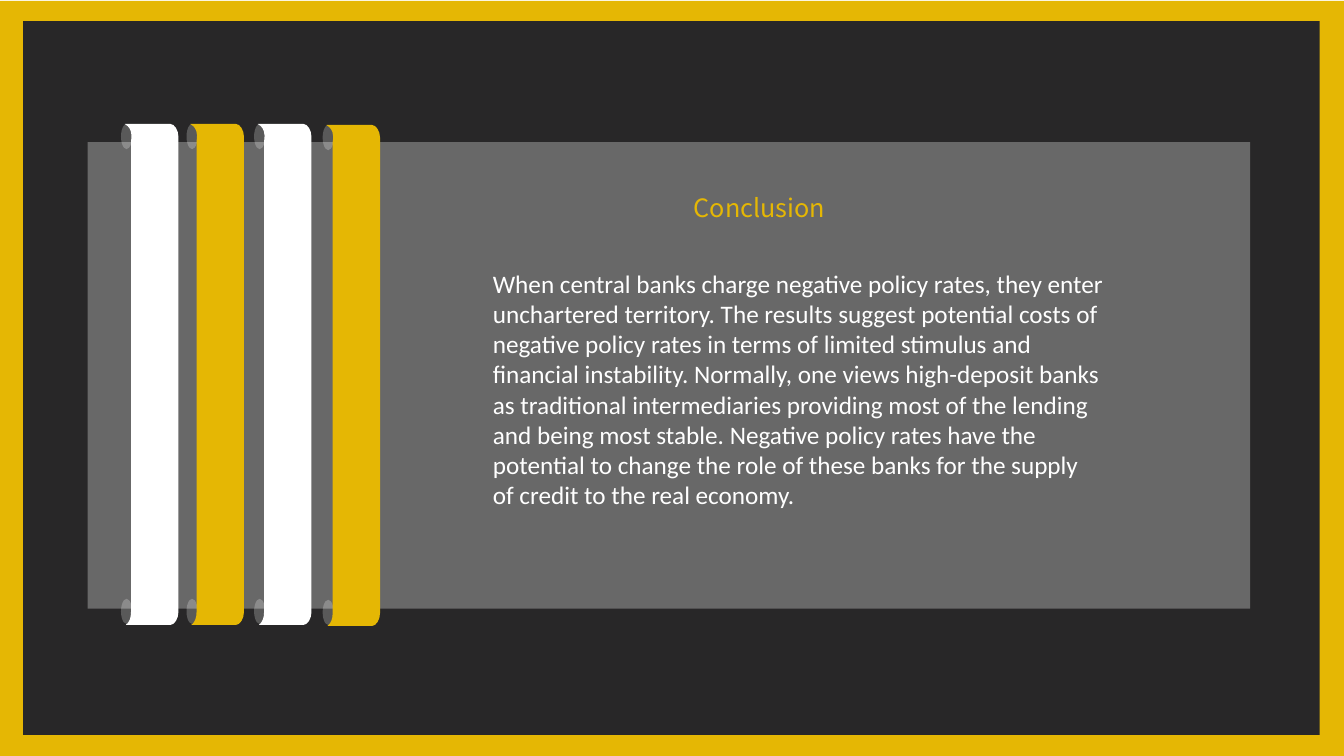
from pptx import Presentation
from pptx.dml.color import RGBColor
from pptx.enum.shapes import MSO_SHAPE as SHAPE
from pptx.enum.text import MSO_ANCHOR as ANCHOR, MSO_AUTO_SIZE as AUTO_SIZE, PP_ALIGN as ALIGN
from pptx.oxml.ns import qn
from pptx.util import Inches, Pt
from lxml import etree

COLORS = {"gold": "E5B704", "dark": "282728", "white": "FFFFFF", "curl": "595959"}

deck = Presentation()
deck.slide_width, deck.slide_height = Inches(13.33), Inches(7.5)
slide = deck.slides.add_slide(deck.slide_layouts[5])
shapes = slide.shapes


def paint(shape, color):
    shape.shadow.inherit = False
    shape.fill.solid()
    shape.fill.fore_color.rgb = RGBColor.from_string(COLORS[color])
    shape.line.fill.background()
    return shape


# Gold frame around the dark ground, kept on the slide master
master_tree = deck.slide_master.shapes._spTree
for place, (color, box) in enumerate((("gold", (0, 0.01, 13.33, 7.5)),
                                      ("dark", (0.23, 0.21, 12.86, 7.08)))):
    ground = paint(shapes.add_shape(SHAPE.RECTANGLE, *map(Inches, box)), color)
    master_tree.insert(2 + place, ground._element)

# Ribbons: left edge of the strip, top, colour
ribbons = [(1.95, 1.23, "gold"), (2.62, 1.23, "white"),
           (3.3, 1.24, "gold"), (1.3, 1.23, "white")]

# Curled ribbon ends, behind the panel
for left, top, _ in ribbons:
    for drop in (0, 4.71):
        curl = (left - 0.1, top + drop, 0.11, 0.25)
        paint(shapes.add_shape(SHAPE.OVAL, *map(Inches, curl)), "curl")

# Translucent panel
panel = paint(shapes.add_shape(SHAPE.RECTANGLE, Inches(0.87), Inches(1.41),
                               Inches(11.53), Inches(4.63)), "white")
panel_color = panel.fill._xPr.find(".//" + qn("a:srgbClr"))
etree.SubElement(panel_color, qn("a:alpha")).set("val", "30000")

# Ribbon strips, measured from their outer left and top:
# corners in order, then the two control points of each rounded corner
corners = [(0.06, 0.17), (0, 0), (0.45, 0), (0.53, 0.13),
           (0.53, 4.84), (0.45, 4.97), (0.02, 4.97), (0.06, 4.84)]
bends = [((0.09, 0), (-0.04, 0)), ((0.49, 0), (0.53, 0.06)),
         ((0.53, 4.91), (0.49, 4.97)), ((-0.02, 4.97), (0.06, 4.97))]
for left, top, color in ribbons:
    points = [(Inches(left - 0.06 + x), Inches(top + y)) for x, y in corners]
    builder = shapes.build_freeform(*points[0])
    builder.add_line_segments(points[1:], close=True)
    strip = paint(builder.convert_to_shape(), color)
    # Every other segment becomes a curve
    segments = list(strip._element.iter(qn("a:lnTo")))
    for segment, controls in zip(segments[::2], bends):
        for order, (x, y) in enumerate(controls):
            control = segment.makeelement(
                qn("a:pt"), {"x": str(int(Inches(x))), "y": str(int(Inches(y)))})
            segment.insert(order, control)
        segment.tag = qn("a:cubicBezTo")

# Title, brought in front of the panel
title = shapes.title
shapes._spTree.append(title._element)
title.left, title.top = Inches(6.78), Inches(1.71)
title.width, title.height = Inches(7.19), Inches(0.5)
title.text_frame.text = "Conclusion"

# Closing statement
statement = shapes.add_textbox(Inches(4.79), Inches(2.61), Inches(6.27), Inches(2.52))
statement.text_frame.text = (
    "When central banks charge negative policy rates, they enter unchartered territory. "
    "The results suggest potential costs of negative policy rates in terms of limited "
    "stimulus and financial instability. Normally, one views high-deposit banks as "
    "traditional intermediaries providing most of the lending and being most stable. "
    "Negative policy rates have the potential to change the role of these banks for the "
    "supply of credit to the real economy.")

for part, font, color, spacing in ((title, "Noto Sans CJK SC", "gold", 1.5),
                                   (statement, "Calibri", "white", 1.0)):
    part.text_frame.word_wrap = True
    part.text_frame.auto_size = AUTO_SIZE.SHAPE_TO_FIT_TEXT
    part.text_frame.vertical_anchor = ANCHOR.TOP
    paragraph = part.text_frame.paragraphs[0]
    paragraph.alignment = ALIGN.LEFT
    paragraph.line_spacing = spacing
    paragraph.font.name = font
    paragraph.font.size = Pt(18)
    paragraph.font.color.rgb = RGBColor.from_string(COLORS[color])

deck.save("out.pptx")
